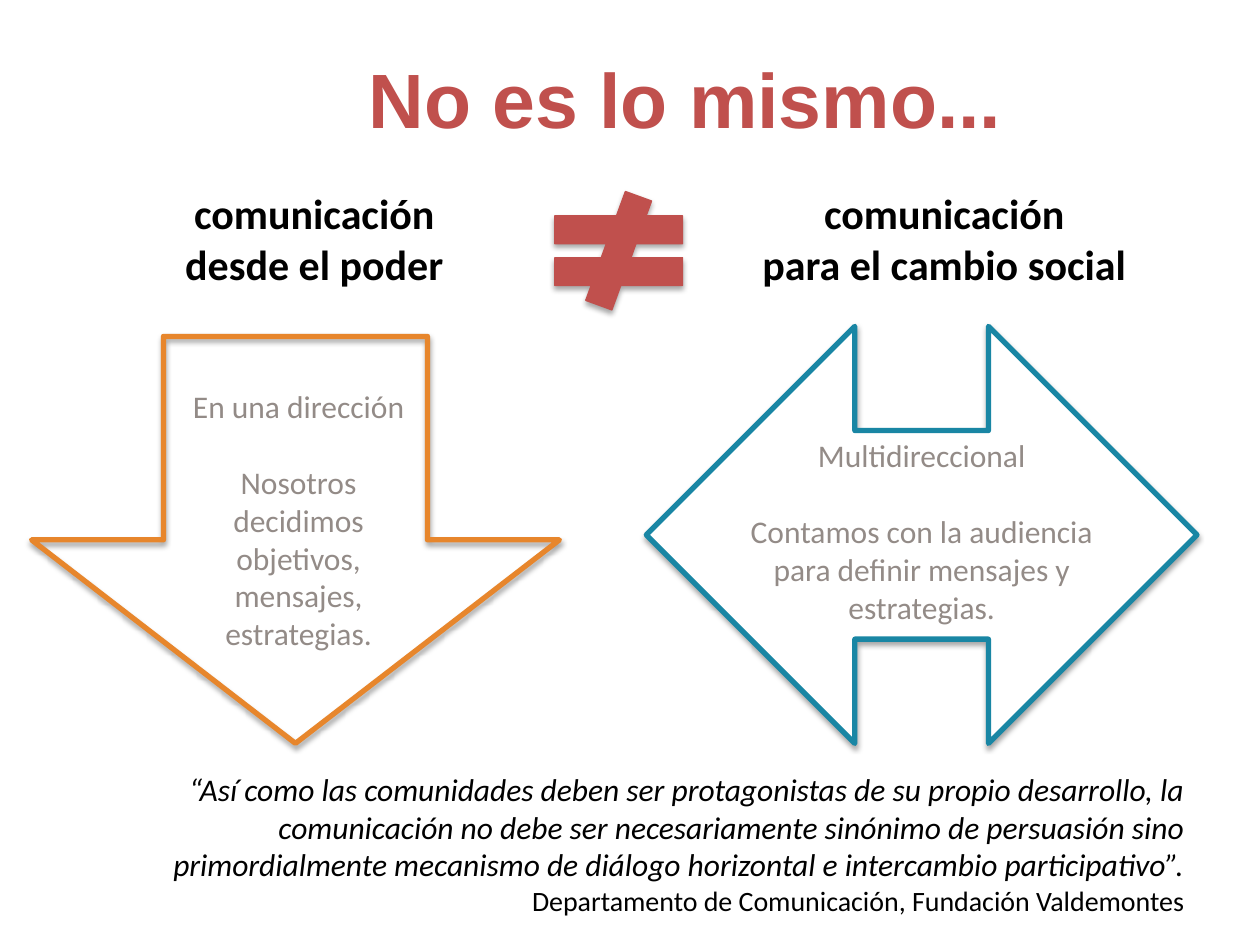
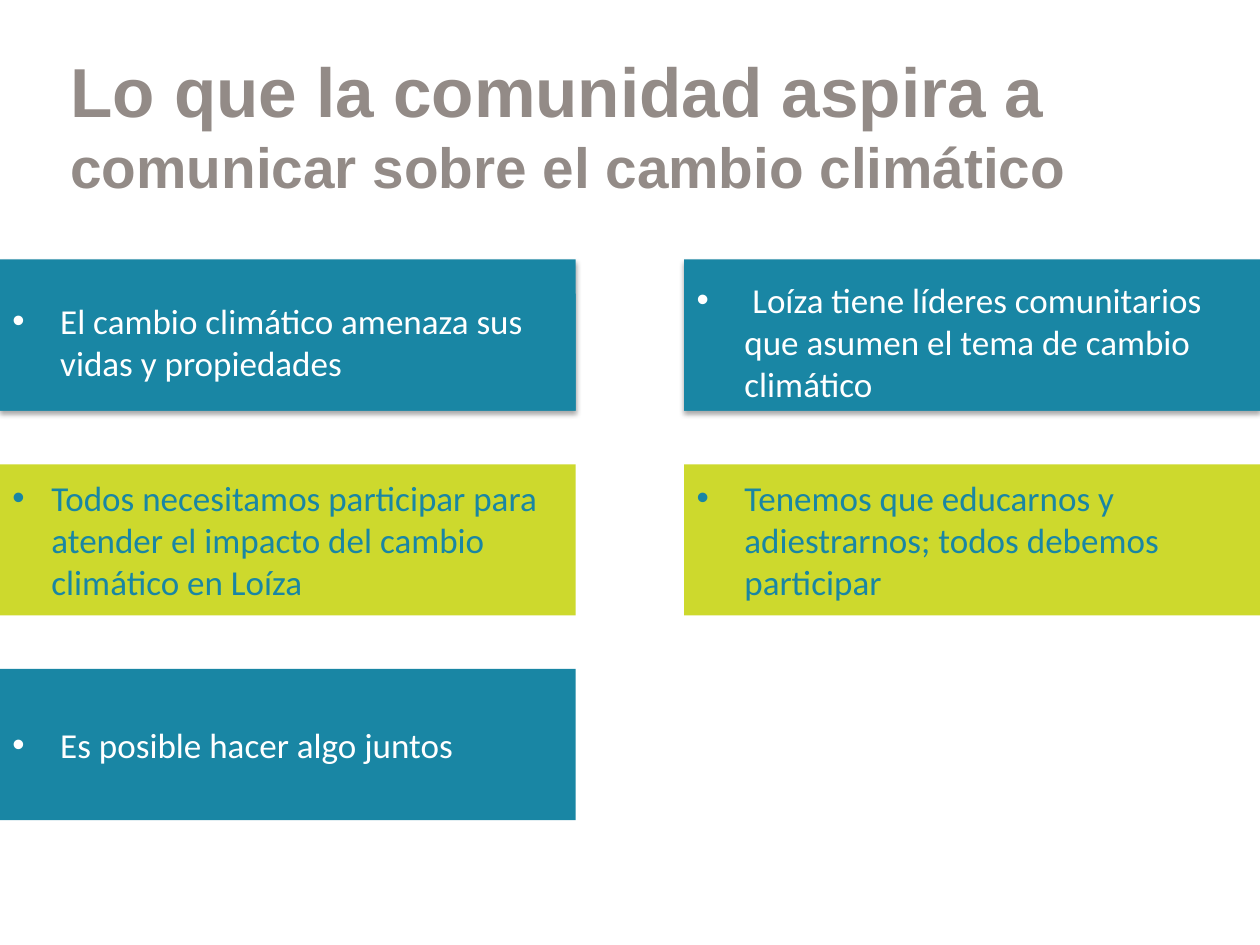
"""Build two slides on community communication and climate change."""
from dataclasses import dataclass

from lxml.etree import SubElement
from pptx import Presentation
from pptx.dml.color import RGBColor
from pptx.enum.shapes import MSO_SHAPE
from pptx.enum.text import MSO_ANCHOR, PP_ALIGN
from pptx.oxml.ns import qn
from pptx.shapes.autoshape import Shape
from pptx.slide import Slide
from pptx.util import Inches, Pt

HUES = {
    "red": "C0504D",
    "gray": "938B87",
    "blue": "1986A4",
    "lime": "CDD92D",
    "gold": "E7862C",
    "white": "FFFFFF",
    "black": "000000",
}
Box = tuple[float, float, float, float]


@dataclass(frozen=True)
class Para:
    text: str
    size: float = 18
    hue: str = "black"
    align: PP_ALIGN = PP_ALIGN.CENTER
    bold: bool = False
    slant: bool = False
    font: str = "Calibri"
    gap: float = 0
    indent: float = 0


@dataclass(frozen=True)
class Form:
    kind: MSO_SHAPE
    box: Box
    fill: str = ""
    line: str = ""
    width: float = 0
    shade: bool = False


@dataclass(frozen=True)
class Card:
    col: int
    row: int
    text: str
    indent: float = 0.38
    inset: float = 0
    shade: bool = False


def color(name: str) -> RGBColor:
    """Return a named colour."""
    return RGBColor.from_string(HUES[name])


def add_bullet(para, indent: float) -> None:
    """Give a paragraph a hanging bullet."""
    props = para._p.get_or_add_pPr()
    props.set("marL", str(Inches(indent)))
    props.set("indent", str(-Inches(indent)))
    SubElement(props, qn("a:buFont"), typeface="Arial")
    SubElement(props, qn("a:buChar"), char="•")


def add_shade(shape: Shape) -> None:
    """Drop a soft shadow below a shape."""
    glow = SubElement(
        shape._element.spPr.find(qn("a:effectLst")), qn("a:outerShdw"),
        blurRad=str(Pt(3.1)), dist=str(Pt(1.8)), dir="5400000", rotWithShape="0")
    tint = SubElement(glow, qn("a:srgbClr"), val=HUES["black"])
    SubElement(tint, qn("a:alpha"), val="35000")


def fill_text(shape: Shape, paras: list[Para], anchor: MSO_ANCHOR,
              wrap: bool = True) -> None:
    """Write styled paragraphs into a shape."""
    frame = shape.text_frame
    frame.word_wrap = wrap
    frame.vertical_anchor = anchor
    for count, item in enumerate(paras):
        para = frame.add_paragraph() if count else frame.paragraphs[0]
        para.add_run().text = item.text
        para.alignment = item.align
        if item.gap:
            para.space_before = Pt(item.gap)
        if item.indent:
            add_bullet(para, item.indent)
        font = para.font
        font.name, font.size = item.font, Pt(item.size)
        font.bold, font.italic = item.bold, item.slant
        font.color.rgb = color(item.hue)


def add_text(slide: Slide, box: Box, paras: list[Para],
             anchor: MSO_ANCHOR = MSO_ANCHOR.TOP, wrap: bool = True) -> Shape:
    """Add a text box."""
    shape = slide.shapes.add_textbox(*map(Inches, box))
    fill_text(shape, paras, anchor, wrap)
    return shape


def add_form(slide: Slide, form: Form) -> Shape:
    """Add a preset shape."""
    shape = slide.shapes.add_shape(form.kind, *map(Inches, form.box))
    shape.shadow.inherit = False
    if form.fill:
        shape.fill.solid()
        shape.fill.fore_color.rgb = color(form.fill)
    else:
        shape.fill.background()
    if form.line:
        shape.line.color.rgb = color(form.line)
        shape.line.width = Pt(form.width)
    else:
        shape.line.fill.background()
    if form.shade:
        add_shade(shape)
    return shape


def add_title(slide: Slide, box: Box, text: str, size: float, hue: str,
              align: PP_ALIGN) -> Shape:
    """Add a bold slide title."""
    para = Para(text, size, hue, align, bold=True, font="Arial")
    return add_text(slide, box, [para], MSO_ANCHOR.MIDDLE)


def add_card(slide: Slide, card: Card) -> None:
    """Place a bulleted card on the grid."""
    wide, high = 4.57, 1.2
    left, top = card.col * 5.43, 2.06 + card.row * 1.625
    fill, hue = ("lime", "blue") if card.row == 1 else ("blue", "white")
    shape = add_form(slide, Form(MSO_SHAPE.RECTANGLE, (left, top, wide, high),
                                 fill, shade=card.shade))
    anchor = MSO_ANCHOR.MIDDLE
    if card.inset:
        box = left, top + card.inset, wide, high - card.inset
        shape = add_form(slide, Form(MSO_SHAPE.RECTANGLE, box, fill))
        anchor = MSO_ANCHOR.TOP
    fill_text(shape, [Para(card.text, 20, hue, PP_ALIGN.LEFT,
                           indent=card.indent)], anchor)


def build_contrast(slide: Slide) -> None:
    """Contrast two ways to communicate."""
    add_title(slide, (0.94, 0.15, 9, 1.25), "No es lo mismo...", 44, "red",
              PP_ALIGN.CENTER)
    add_form(slide, Form(MSO_SHAPE.MATH_NOT_EQUAL, (4.22, 1.52, 1.38, 0.94),
                         "red", "red", 0.75, True))
    heads = [((1.36, 1.44, 2.27, 1.31), "desde el poder"),
             ((5.93, 1.44, 3.13, 1.31), "para el cambio social")]
    for box, text in heads:
        add_text(slide, box, [Para(line, 24, bold=True)
                              for line in ("comunicación", text)], wrap=False)
    arrows = [
        (Form(MSO_SHAPE.DOWN_ARROW, (0.25, 2.67, 4.19, 3.23), "", "gold", 3, True),
         (1.36, 3.02, 2.02, 2.24), "En una dirección",
         "Nosotros decidimos objetivos, mensajes, estrategias."),
        (Form(MSO_SHAPE.LEFT_RIGHT_ARROW, (5.13, 2.59, 4.37, 3.31), "white",
              "blue", 3, True),
         (5.77, 3.41, 3.09, 1.65), "Multidireccional",
         "Contamos con la audiencia para definir mensajes y estrategias."),
    ]
    for form, box, head, body in arrows:
        add_form(slide, form)
        add_text(slide, box, [Para(head, hue="gray"),
                              Para(body, hue="gray", gap=22)])
    quote = ("“Así como las comunidades deben ser protagonistas de su propio "
             "desarrollo, la comunicación no debe ser necesariamente sinónimo de "
             "persuasión sino primordialmente mecanismo de diálogo horizontal e "
             "intercambio participativo”.")
    credit = "Departamento de Comunicación, Fundación Valdemontes"
    add_text(slide, (0.72, 6.06, 8.78, 1.31),
             [Para(quote, align=PP_ALIGN.RIGHT, slant=True),
              Para(credit, 16, align=PP_ALIGN.RIGHT)])


def build_hopes(slide: Slide) -> None:
    """List what the community hopes to tell."""
    title = add_title(slide, (0.46, 0.36, 8.69, 1.25),
                      "Lo que la comunidad aspira a ", 39.6, "gray",
                      PP_ALIGN.LEFT)
    run = title.text_frame.paragraphs[0].add_run()
    run.text = "comunicar sobre el cambio climático"
    run.font.size = Pt(32.4)
    cards = [
        Card(0, 0, "El cambio climático amenaza sus vidas y propiedades",
             inset=0.27, shade=True),
        Card(0, 1, "Todos necesitamos participar para atender el impacto del "
             "cambio climático en Loíza", indent=0.31),
        Card(0, 2, "Es posible hacer algo juntos"),
        Card(1, 1, "Tenemos que educarnos y adiestrarnos; todos debemos "
             "participar"),
        Card(1, 0, " Loíza tiene líderes comunitarios que asumen el tema de "
             "cambio climático", inset=0.1, shade=True),
    ]
    for card in cards:
        add_card(slide, card)


def main() -> None:
    """Build and save the deck."""
    deck = Presentation()
    deck.slide_width, deck.slide_height = Inches(10), Inches(7.5)
    for build in (build_contrast, build_hopes):
        build(deck.slides.add_slide(deck.slide_layouts[6]))
    deck.save("out.pptx")


if __name__ == "__main__":
    main()
